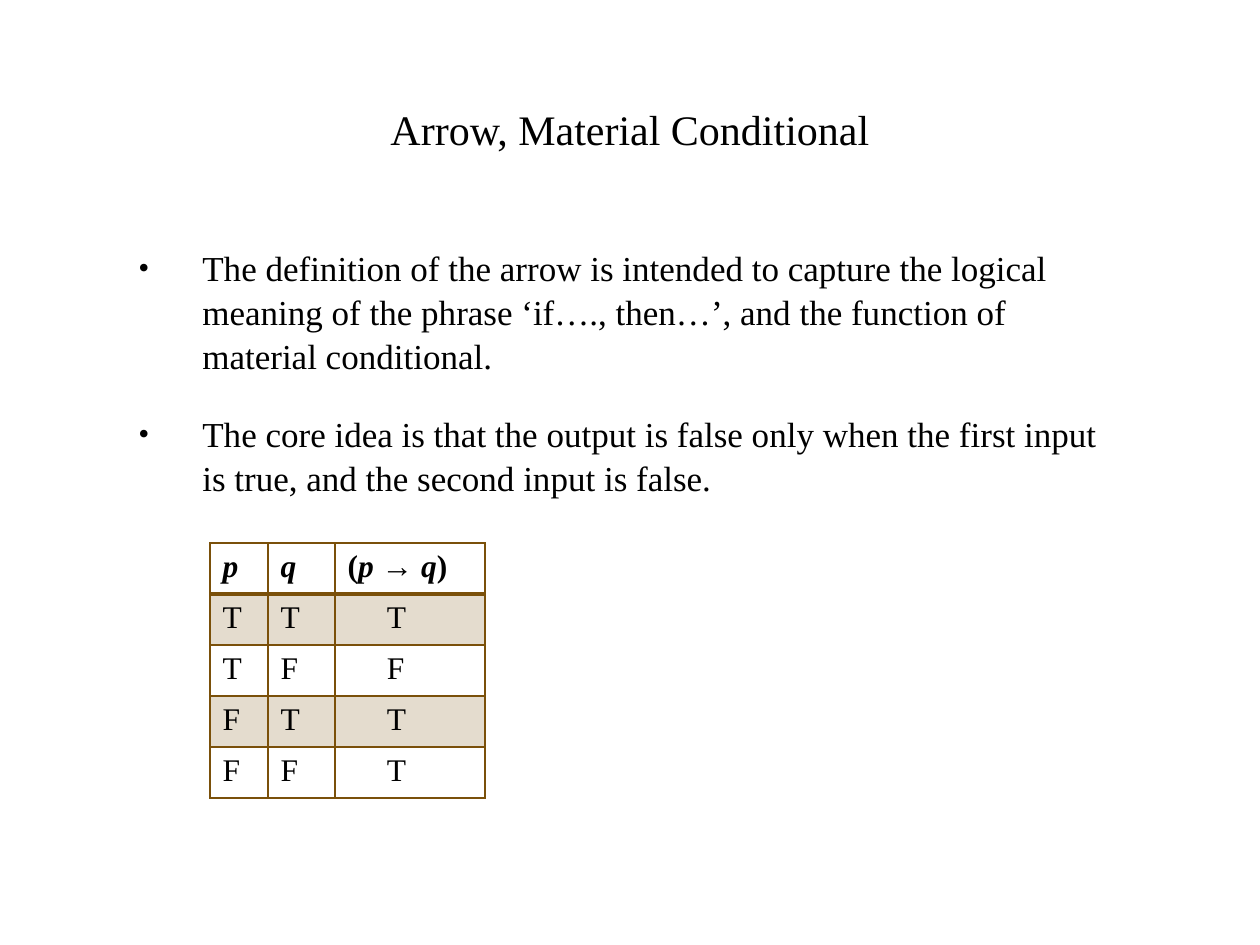
import pptx
import pptx.chart.data
import pptx.dml.color
import pptx.enum.text
import pptx.oxml
import pptx.oxml.ns
import pptx.util

HUES = {"ink": "000000", "line": "7A500A"}
FACE = "Times New Roman"
TITLE = "Arrow, Material Conditional"
POINTS = [
    "The definition of the arrow is intended to capture the logical meaning of the "
    "phrase ‘if…., then…’, and the function of material conditional.",
    "The core idea is that the output is false only when the first input is true, "
    "and the second input is false.",
]
HEADS = [
    [("p", True)],
    [("q", True)],
    [("(", False), ("p ", True), ("→ ", False), ("q", True), (")", False)],
]
TRUTH = ["TTT", "TFF", "FTT", "FFT"]


def px(num):
    """Turn pixels into EMU."""
    return pptx.util.Emu(round(num * 914400 / 126))


def apply(item, form):
    """Set each attribute named in a dict."""
    for name, value in form.items():
        setattr(item, name, value)


def node(tag, body="", **attrs):
    """Make one drawing element."""
    pairs = "".join(f' {key}="{value}"' for key, value in attrs.items())
    space = pptx.oxml.ns.nsdecls("a")
    return pptx.oxml.parse_xml(f"<a:{tag} {space}{pairs}>{body}</a:{tag}>")


def write(para, text, size, **form):
    """Add one run in the slide's typeface."""
    run = para.add_run()
    run.text = text
    apply(run.font, {"name": FACE, "size": pptx.util.Pt(size), **form})
    run.font.color.rgb = pptx.dml.color.RGBColor.from_string(HUES["ink"])


def frame(slide, box):
    """Add a wrapping text box."""
    text = slide.shapes.add_textbox(*map(px, box)).text_frame
    text.word_wrap = True
    return text


def title(slide, box):
    """Place the centred heading."""
    text = frame(slide, box)
    text.vertical_anchor = pptx.enum.text.MSO_ANCHOR.MIDDLE
    para = text.paragraphs[0]
    para.alignment = pptx.enum.text.PP_ALIGN.CENTER
    write(para, TITLE, 24)


def points(slide, box):
    """Place the bulleted points."""
    text = frame(slide, box)
    dent = px(64)
    for row, words in enumerate(POINTS):
        para = text.add_paragraph() if row else text.paragraphs[0]
        props = para._p.get_or_add_pPr()
        apply(props, {"marL": dent, "indent": -dent})
        for key, value in (("marL", dent), ("indent", -dent)):
            props.set(key, str(int(value)))
        props.append(node("buSzPct", val=90000))
        props.append(node("buFont", typeface=FACE))
        props.append(node("buChar", char="•"))
        apply(para, {"line_spacing": 1.04, "space_before": pptx.util.Pt(20 if row else 0)})
        write(para, words, 20)


def paint(cell, row):
    """Give a cell its tint and its four borders."""
    props = cell._tc.get_or_add_tcPr()
    hue = HUES["line"]
    wide = {"lnL": 1, "lnR": 1, "lnT": 2 if row == 1 else 1, "lnB": 1 if row else 2}
    for tag, width in wide.items():
        fill = f'<a:solidFill><a:srgbClr val="{hue}"/></a:solidFill>'
        props.append(node(tag, fill, w=pptx.util.Pt(width)))
    if row % 2:
        tint = f'<a:srgbClr val="{hue}"><a:alpha val="20000"/></a:srgbClr>'
        props.append(node("solidFill", tint))
    else:
        props.append(node("noFill"))


def truth(slide, box):
    """Place the truth table."""
    rows = [HEADS] + [[[(mark, False)] for mark in line] for line in TRUTH]
    grid = slide.shapes.add_table(len(rows), len(HEADS), *map(px, box)).table
    apply(grid, {"first_row": False, "horz_banding": False})
    for col, width in zip(grid.columns, (58, 67, 150)):
        col.width = px(width)
    for row, line in enumerate(rows):
        for col, parts in enumerate(line):
            cell = grid.cell(row, col)
            if row and col == 2:
                cell.margin_left = px(52)
            for word, slant in parts:
                write(cell.text_frame.paragraphs[0], word, 18, bold=row == 0, italic=slant)
            paint(cell, row)


def main():
    """Build and save the slide."""
    deck = pptx.Presentation()
    apply(deck, {"slide_width": px(1260), "slide_height": px(945)})
    slide = deck.slides.add_slide(deck.slide_layouts[6])
    title(slide, (126, 69, 1008, 120))
    points(slide, (126, 239, 1008, 560))
    truth(slide, (210, 543, 275, 255))
    deck.save("out.pptx")


if __name__ == "__main__":
    main()
